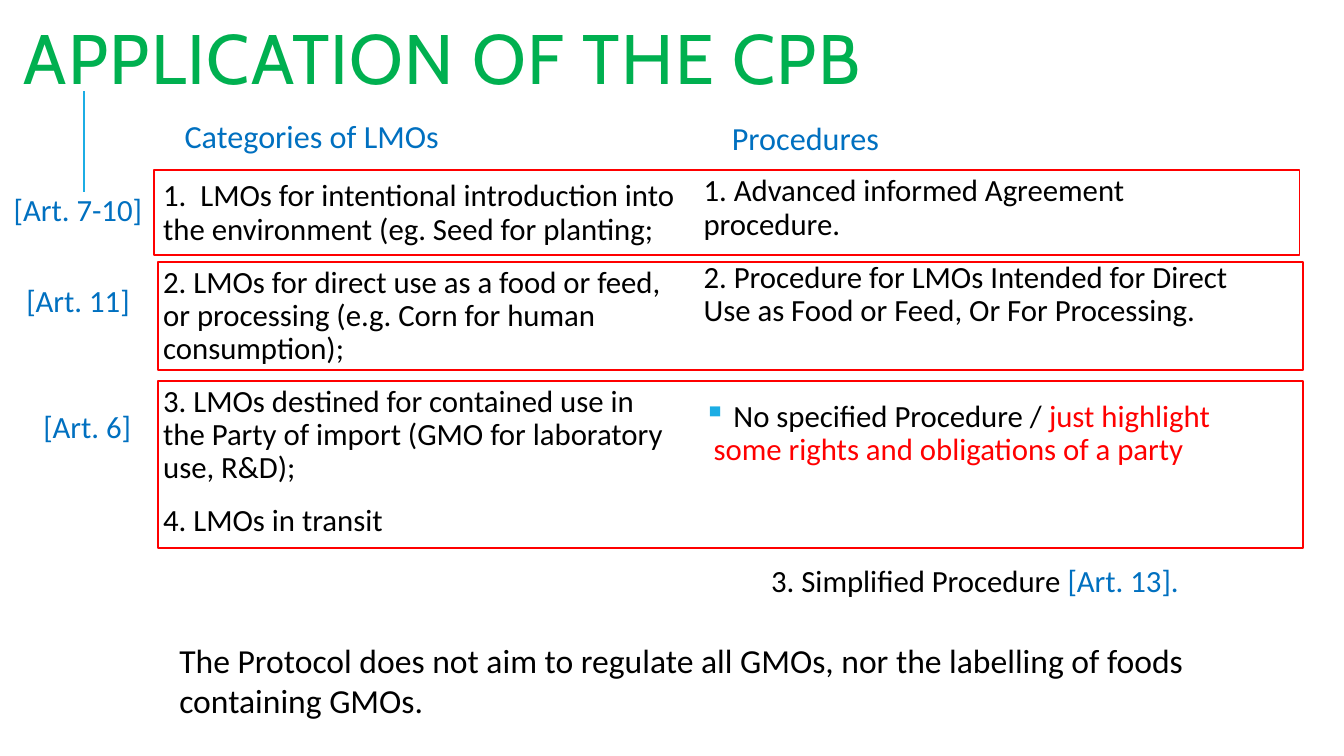
from lxml import etree
from pptx import Presentation
from pptx.dml.color import RGBColor
from pptx.enum.shapes import MSO_CONNECTOR, MSO_SHAPE
from pptx.enum.text import MSO_ANCHOR, PP_ALIGN
from pptx.oxml.ns import qn
from pptx.util import Pt

RECTANGLE = MSO_SHAPE.RECTANGLE
STRAIGHT = MSO_CONNECTOR.STRAIGHT
TOP, MIDDLE = MSO_ANCHOR.TOP, MSO_ANCHOR.MIDDLE
LEFT, CENTER = PP_ALIGN.LEFT, PP_ALIGN.CENTER

COLORS = {
    "title": "00B050",
    "label": "0070C0",
    "body": "000000",
    "alert": "FF0000",
    "accent": "1CADE4",
}

TIGHT = (3.6, 3.6)
NORMAL = (7.2, 3.6)
WIDE = (10.8, 3.6)
LIST_FORMAT = {"line_spacing": 0.9, "space_before": Pt(12), "space_after": Pt(2)}
HEADING_FORMAT = {"line_spacing": 0.9}

CATEGORIES = [
    "1.  LMOs for intentional introduction into the environment (eg. Seed for planting;",
    "2. LMOs for direct use as a food or feed, or processing (e.g. Corn for human consumption);",
    "3. LMOs destined for contained use in the Party of import (GMO for laboratory use, R&D);",
    "4. LMOs in transit",
]
PROCEDURES = [
    "1. Advanced informed Agreement procedure.",
    "2. Procedure for LMOs Intended for Direct Use as Food or Feed, Or For Processing.",
    [(" No specified Procedure / ", "body"),
     ("just highlight some rights and obligations of a party", "alert")],
]
# Article label, its box, and the frame around the matching row
ROWS = [
    ("[Art. 7-10]", (-5.8, 132.5, 123, 32), (110.2, 121.7, 818, 60.5)),
    ("[Art. 11]", (10, 198, 91.5, 39), (113, 187.2, 818, 77)),
    ("[Art. 6]", (16.6, 288, 91.5, 39), (113, 272.2, 818, 119.5)),
]


def color(name):
    return RGBColor.from_string(COLORS[name])


def apply_format(target, values):
    for name, value in values.items():
        setattr(target, name, value)


def add_text(slide, box, paragraphs, size=22, color_name="body", font="Calibri",
             anchor=TOP, align=LEFT, insets=NORMAL, paragraph_format=None):
    """Each paragraph is a string or a list of (text, colour name) runs."""
    shape = slide.shapes.add_textbox(*map(Pt, box))
    frame = shape.text_frame
    side, edge = map(Pt, insets)
    apply_format(frame, {
        "word_wrap": True, "vertical_anchor": anchor,
        "margin_left": side, "margin_right": side,
        "margin_top": edge, "margin_bottom": edge,
    })
    for index, content in enumerate(paragraphs):
        paragraph = frame.paragraphs[0] if index == 0 else frame.add_paragraph()
        apply_format(paragraph, {"alignment": align, **(paragraph_format or {})})
        runs = [(content, color_name)] if isinstance(content, str) else content
        for text, run_color in runs:
            run = paragraph.add_run()
            run.text = text
            apply_format(run.font, {"name": font, "size": Pt(size)})
            run.font.color.rgb = color(run_color)
    return frame


def add_bullet(paragraph, character, color_name, indent):
    properties = paragraph._p.get_or_add_pPr()
    properties.set("marL", str(Pt(indent)))
    properties.set("indent", str(-Pt(indent)))
    bullet_color = etree.SubElement(properties, qn("a:buClr"))
    etree.SubElement(bullet_color, qn("a:srgbClr"), val=COLORS[color_name])
    etree.SubElement(properties, qn("a:buChar"), char=character)


def add_frame(slide, box):
    shape = slide.shapes.add_shape(RECTANGLE, *map(Pt, box))
    shape.shadow.inherit = False
    shape.fill.background()
    shape.line.color.rgb = color("alert")
    shape.line.width = Pt(1.25)


def add_line(slide, start, end):
    line = slide.shapes.add_connector(STRAIGHT, *map(Pt, start + end))
    line.line.color.rgb = color("accent")
    line.line.width = Pt(1.5)
    etree.SubElement(line._element.spPr, qn("a:effectLst"))


def add_title(slide):
    title = add_text(slide, (10, 9.4, 725, 72.7), ["APPLICATION OF THE CPB"], 50, "title",
                     "Cabin", MIDDLE, paragraph_format={"line_spacing": 0.8})
    title.paragraphs[0].runs[0].font._element.set("spc", "100")


def add_columns(slide):
    for heading, box in (("Categories of LMOs", (121, 68.4, 366.5, 59.8)),
                         ("Procedures", (512, 67.7, 374.4, 64.8))):
        add_text(slide, box, [heading], 23, "label", anchor=MIDDLE, insets=WIDE,
                 paragraph_format=HEADING_FORMAT)
    add_text(slide, (113, 125.3, 374.4, 266.4), CATEGORIES, insets=TIGHT,
             paragraph_format=LIST_FORMAT)
    procedures = add_text(slide, (499, 121.7, 384.5, 262.8), PROCEDURES, insets=TIGHT,
                          paragraph_format=LIST_FORMAT)
    unspecified = procedures.paragraphs[-1]
    unspecified.space_before = Pt(50)
    add_bullet(unspecified, "▪", "accent", 7.2)


def main():
    presentation = Presentation()
    presentation.slide_width, presentation.slide_height = Pt(960), Pt(540)
    slide = presentation.slides.add_slide(presentation.slide_layouts[6])

    add_line(slide, (60, 136.8), (60, 64.8))
    add_title(slide)
    add_columns(slide)
    add_text(slide, (547.2, 401, 413, 43.2),
             [[("3. Simplified Procedure ", "body"), ("[Art. 13].", "label")]],
             insets=TIGHT, paragraph_format=LIST_FORMAT)
    for article, label_box, frame_box in ROWS:
        add_text(slide, label_box, [article], color_name="label", align=CENTER)
        add_frame(slide, frame_box)
    add_text(slide, (121, 453.6, 818, 65.5),
             ["The Protocol does not aim to regulate all GMOs, nor the labelling of foods "
              "containing GMOs."], 24)

    presentation.save("out.pptx")


if __name__ == "__main__":
    main()
